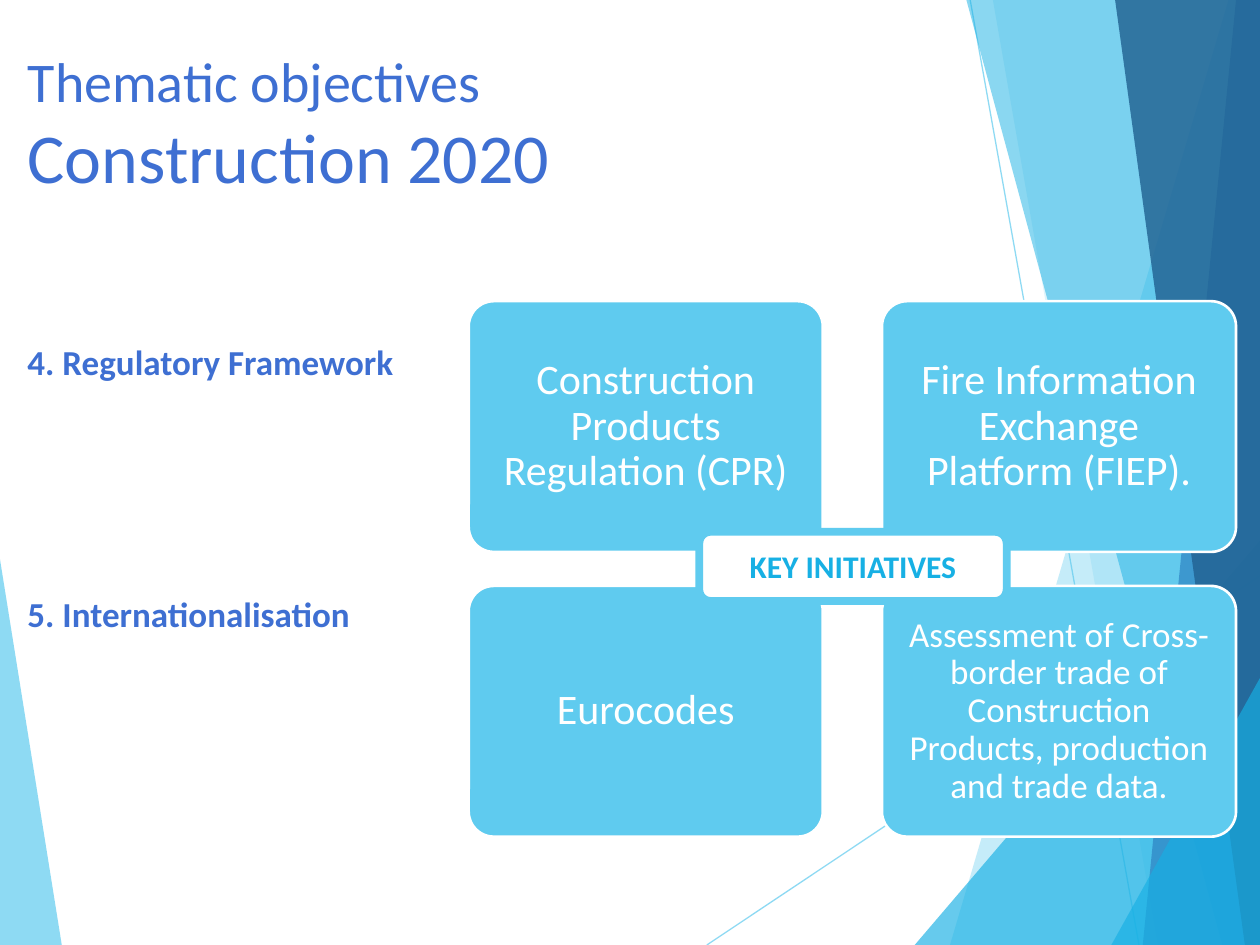
from dataclasses import dataclass

from pptx import Presentation
from pptx.dml.color import RGBColor
from pptx.enum.shapes import MSO_CONNECTOR, MSO_SHAPE
from pptx.enum.text import MSO_ANCHOR, PP_ALIGN
from pptx.oxml.ns import qn
from pptx.oxml.xmlchemy import OxmlElement
from pptx.util import Inches, Pt


@dataclass(frozen=True)
class Theme:
    font: str = "Calibri"
    heading: str = "3E6FD2"
    sky: str = "5FCBEF"
    cyan: str = "17B0E4"
    blue: str = "2E83C3"
    navy: str = "226292"
    white: str = "FFFFFF"
    title_size: int = 40
    subtitle_size: int = 32
    card_size: int = 24
    label_size: int = 20
    key_size: int = 18


THEME = Theme()

# Background facets: colour, opacity in percent, corner points
FACETS = [
    (THEME.sky, 70, [(0, 4.44), (0.49, 7.5), (0, 7.5)]),
    (THEME.sky, 36, [(9.75, 0), (7.54, 7.5), (10, 7.5), (10, 0)]),
    (THEME.sky, 20, [(7.88, 0), (9.19, 7.5), (10, 7.5), (10, 0)]),
    (THEME.cyan, 66, [(7.26, 7.5), (10, 4.29), (10, 7.5)]),
    (THEME.cyan, 50, [(7.67, 0), (9.7, 7.5), (10, 7.5), (10, 0)]),
    (THEME.blue, 70, [(9.81, 0), (9.07, 7.5), (10, 7.5), (10, 0)]),
    (THEME.navy, 82, [(8.85, 0), (9.88, 7.5), (10, 7.5), (10, 0)]),
    (THEME.cyan, 66, [(8.82, 7.5), (10, 5.38), (10, 7.5)]),
]
RAYS = [((5.61, 7.5), (10, 4.57)), ((7.7, 0), (9.04, 7.5))]

LABELS = [("4. Regulatory Framework", 2.65), ("5. Internationalisation", 4.65)]

# Rows of cards: text, type size, inner margin
CARDS = [
    [("Construction Products Regulation (CPR)", THEME.card_size, 0.16),
     ("Fire Information Exchange Platform (FIEP).", THEME.card_size, 0.16)],
    [("Eurocodes", THEME.card_size, 0.16),
     ("Assessment of Cross-border trade of Construction Products, "
      "production and trade data.", THEME.label_size, 0.14)],
]


def write(frame, *lines, color, bold=False, align=PP_ALIGN.LEFT,
          anchor=MSO_ANCHOR.TOP, spacing=1.0, margin=None):
    """Fill a text frame with one paragraph of (text, size) lines."""
    frame.word_wrap = True
    frame.vertical_anchor = anchor
    if margin is not None:
        frame.margin_left = frame.margin_right = Inches(margin)
        frame.margin_top = frame.margin_bottom = Inches(margin)
    paragraph = frame.paragraphs[0]
    paragraph.alignment = align
    paragraph.line_spacing = spacing
    for number, (text, size) in enumerate(lines):
        if number:
            paragraph.add_line_break()
        run = paragraph.add_run()
        run.text = text
        run.font.name = THEME.font
        run.font.size = Pt(size)
        run.font.bold = bold
        run.font.color.rgb = RGBColor.from_string(color)


def set_opacity(part, percent):
    for color in part.element.spPr.iter(qn("a:srgbClr")):
        alpha = OxmlElement("a:alpha")
        alpha.set("val", str(percent * 1000))
        color.append(alpha)


def add_facet(slide, color, opacity, points):
    start, *rest = [(Inches(x), Inches(y)) for x, y in points]
    builder = slide.shapes.build_freeform(*start)
    builder.add_line_segments(rest, close=True)
    facet = builder.convert_to_shape()
    facet.shadow.inherit = False
    facet.fill.solid()
    facet.fill.fore_color.rgb = RGBColor.from_string(color)
    facet.line.fill.background()
    set_opacity(facet, opacity)


def add_ray(slide, start, end):
    ray = slide.shapes.add_connector(
        MSO_CONNECTOR.STRAIGHT, *(Inches(value) for value in (*start, *end)))
    ray.line.color.rgb = RGBColor.from_string(THEME.sky)
    ray.line.width = Pt(0.75)
    set_opacity(ray, 70)
    ray.element.spPr.append(OxmlElement("a:effectLst"))


def add_rounded_box(slide, left, top, width, height, fill, outline, weight):
    box = slide.shapes.add_shape(
        MSO_SHAPE.ROUNDED_RECTANGLE,
        Inches(left), Inches(top), Inches(width), Inches(height))
    box.shadow.inherit = False
    box.fill.solid()
    box.fill.fore_color.rgb = RGBColor.from_string(fill)
    box.line.color.rgb = RGBColor.from_string(outline)
    box.line.width = Pt(weight)
    return box


def add_title(slide):
    title = slide.shapes.title
    title.left, title.top = Inches(0.12), Inches(0.32)
    title.width, title.height = Inches(6.94), Inches(1.44)
    write(title.text_frame, ("Thematic objectives", THEME.subtitle_size),
          ("Construction 2020", THEME.title_size), color=THEME.heading)


def add_label(slide, text, top):
    label = slide.shapes.add_textbox(
        Inches(0.12), Inches(top), Inches(3.5), Inches(0.45))
    write(label.text_frame, (text, THEME.label_size),
          color=THEME.heading, bold=True)


def add_card(slide, row, column, text, size, margin):
    card = add_rounded_box(slide, 3.72 + 3.28 * column, 2.39 + 2.26 * row,
                           2.81, 1.99, THEME.sky, THEME.white, 1.5)
    card.adjustments[0] = 0.1
    write(card.text_frame, (text, size), color=THEME.white, spacing=0.9,
          align=PP_ALIGN.CENTER, anchor=MSO_ANCHOR.MIDDLE, margin=margin)


def add_key_banner(slide):
    banner = add_rounded_box(slide, 5.55, 4.22, 2.44, 0.55,
                             THEME.white, THEME.sky, 4.5)
    write(banner.text_frame, ("KEY INITIATIVES", THEME.key_size),
          color=THEME.cyan, bold=True, align=PP_ALIGN.CENTER,
          anchor=MSO_ANCHOR.MIDDLE)


def main():
    deck = Presentation()
    deck.slide_width, deck.slide_height = Inches(10), Inches(7.5)
    slide = deck.slides.add_slide(deck.slide_layouts[5])

    # Background decoration
    for ray in RAYS:
        add_ray(slide, *ray)
    for facet in FACETS:
        add_facet(slide, *facet)

    # Title and objectives
    add_title(slide)
    for label in LABELS:
        add_label(slide, *label)

    # Key initiatives
    for row, cards in enumerate(CARDS):
        for column, card in enumerate(cards):
            add_card(slide, row, column, *card)
    add_key_banner(slide)

    deck.save("out.pptx")


if __name__ == "__main__":
    main()
